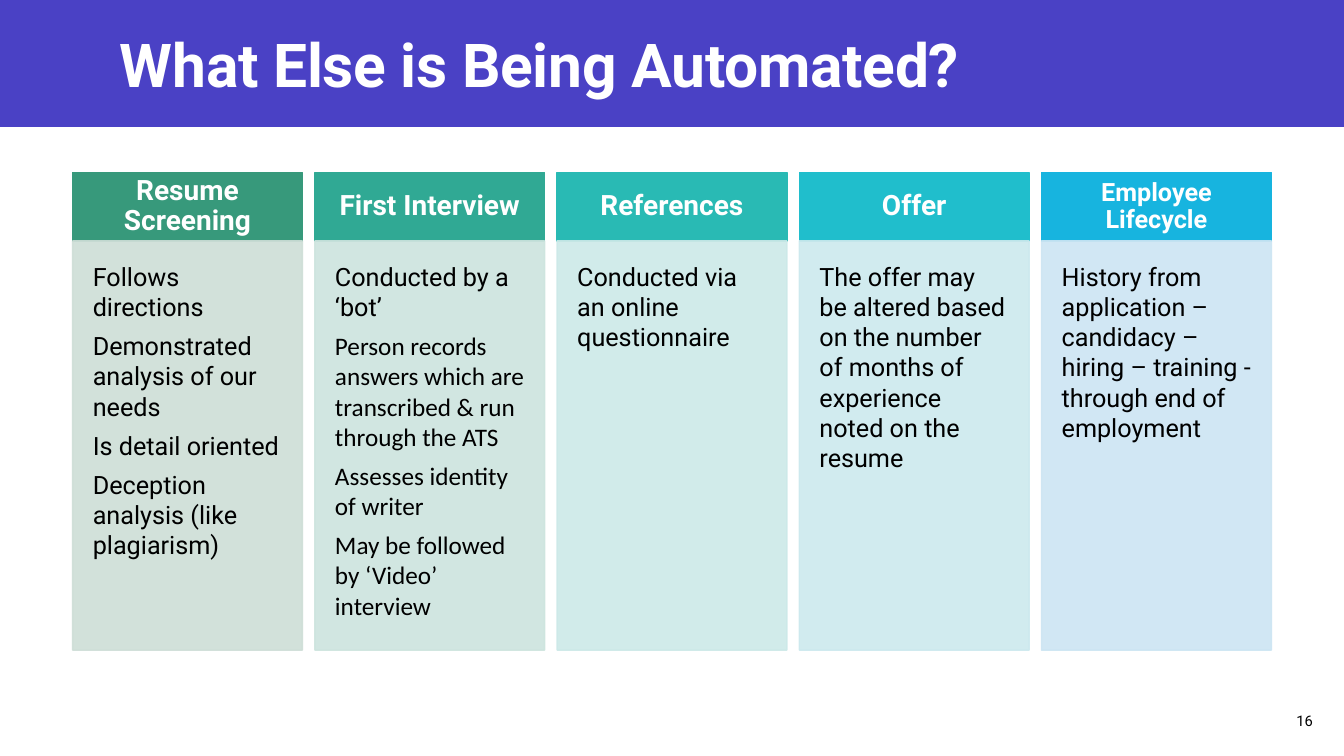
from pptx import Presentation
from pptx.dml.color import RGBColor
from pptx.enum.shapes import MSO_SHAPE
from pptx.enum.text import MSO_ANCHOR, MSO_AUTO_SIZE, PP_ALIGN
from pptx.oxml.ns import qn
from pptx.util import Inches, Pt
from lxml import etree

TITLE = "What Else is Being Automated?"
PAGE = "16"
COLORS = {"banner": "4A41C5", "light": "FFFFFF", "dark": "000000"}

# Heading, heading size, heading colour, body colour, [(text, font)]
STAGES = [
    ("Resume Screening", 20, "37997B", "CEDED7", [
        ("Follows directions", "Roboto"),
        ("Demonstrated analysis of our needs", "Roboto"),
        ("Is detail oriented", "Roboto"),
        ("Deception analysis (like plagiarism)", "Roboto")]),
    ("First Interview", 20, "30A994", "CDE4DE", [
        ("Conducted by a ‘bot’", "Roboto"),
        ("Person records answers which are transcribed & run through the ATS", "Calibri"),
        ("Assesses identity of writer", "Calibri"),
        ("May be followed by ‘Video’ interview", "Calibri")]),
    ("References", 20, "29BAB4", "CCE9E8", [
        ("Conducted via an online questionnaire", "Roboto")]),
    ("Offer", 20, "20BECC", "CCE9EE", [
        ("The offer may be altered based on the number of months of "
         "experience noted on the resume", "Roboto")]),
    ("Employee Lifecycle", 18, "17B4DF", "CCE5F3", [
        ("History from application – candidacy – hiring – training - "
         "through end of employment", "Roboto")]),
]

LEFT, TOP, PITCH, COL_W = 0.72, 1.71, 2.4025, 2.28
HEAD_H, BODY_H = 0.68, 4.06
ALPHA = 90


def add_run(p, text, size, color, font="Roboto", bold=False):
    r = p.add_run()
    r.text = text
    r.font.size, r.font.name, r.font.bold = Pt(size), font, bold
    r.font.color.rgb = RGBColor.from_string(color)
    return r


def add_box(x, y, w, h, color, alpha=None):
    sp = s.shapes.add_shape(MSO_SHAPE.RECTANGLE, Inches(x), Inches(y), Inches(w), Inches(h))
    sp.shadow.inherit = False
    sp.fill.solid()
    sp.fill.fore_color.rgb = RGBColor.from_string(color)
    sp.line.color.rgb = RGBColor.from_string(color)
    sp.line.width = Pt(1)
    if alpha:
        for clr in sp._element.spPr.iter(qn("a:srgbClr")):
            etree.SubElement(clr, qn("a:alpha"), val=str(alpha * 1000))
    return sp


def set_frame(tf, anchor, side, edge):
    tf.word_wrap = True
    tf.auto_size = MSO_AUTO_SIZE.NONE
    tf.vertical_anchor = anchor
    tf.margin_left = tf.margin_right = Inches(side)
    tf.margin_top = tf.margin_bottom = Inches(edge)


prs = Presentation()
prs.slide_width, prs.slide_height = Inches(13.33), Inches(7.5)
s = prs.slides.add_slide(prs.slide_layouts[5])

# Banner, behind the title
banner = add_box(0, 0, 13.33, 1.26, COLORS["banner"])
banner.line.fill.background()
s.shapes._spTree.insert(2, banner._element)

# Title
title = s.shapes.title
title.left, title.top, title.width, title.height = map(Inches, (1.09, 0.21, 10.96, 0.83))
set_frame(title.text_frame, MSO_ANCHOR.MIDDLE, 0.1, 0.05)
p = title.text_frame.paragraphs[0]
p.alignment = PP_ALIGN.LEFT
r = add_run(p, TITLE, 43.2, COLORS["light"], bold=True)
r.font._element.set("spc", "-20")

# Stage columns
for i, (heading, size, head_color, body_color, points) in enumerate(STAGES):
    x = LEFT + i * PITCH
    head = add_box(x, TOP, COL_W, HEAD_H, head_color)
    set_frame(head.text_frame, MSO_ANCHOR.MIDDLE, 0.18, 0.03)
    p = head.text_frame.paragraphs[0]
    p.alignment, p.line_spacing = PP_ALIGN.CENTER, 0.9
    add_run(p, heading, size, COLORS["light"], bold=True)

    body = add_box(x, TOP + HEAD_H, COL_W, BODY_H, body_color, ALPHA)
    tf = body.text_frame
    set_frame(tf, MSO_ANCHOR.TOP, 0.2, 0.2)
    for j, (text, font) in enumerate(points):
        p = tf.add_paragraph() if j else tf.paragraphs[0]
        p.alignment, p.space_after = PP_ALIGN.LEFT, Pt(6.3)
        add_run(p, text, 18, COLORS["dark"], font)

# Page number
page = s.shapes.add_textbox(Inches(12.43), Inches(6.95), Inches(0.69), Inches(0.4))
set_frame(page.text_frame, MSO_ANCHOR.MIDDLE, 0.1, 0.05)
p = page.text_frame.paragraphs[0]
p.alignment = PP_ALIGN.RIGHT
add_run(p, PAGE, 10.5, COLORS["dark"])

prs.save("out.pptx")
